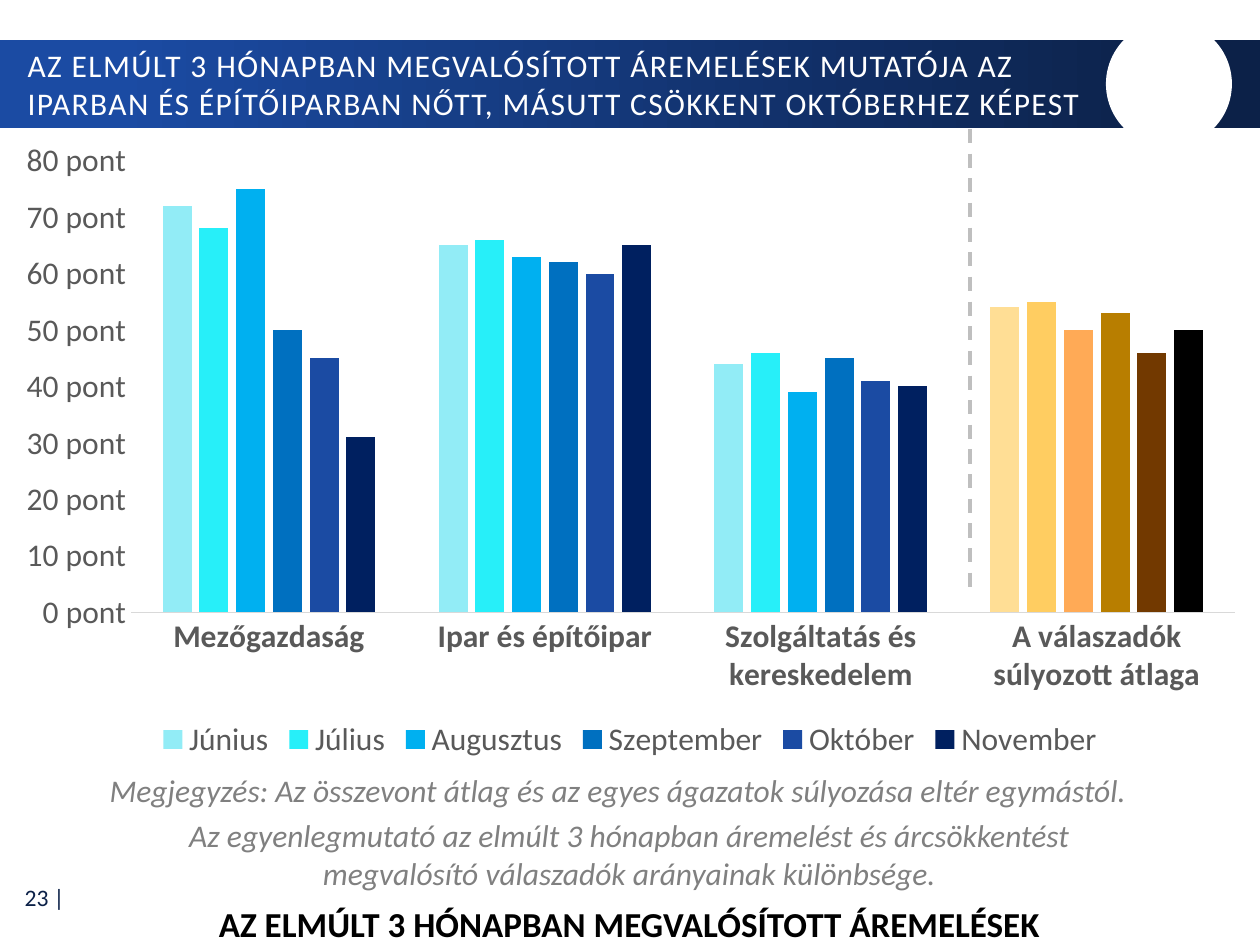
from lxml.etree import SubElement
from pptx import Presentation
from pptx.chart.data import CategoryChartData
from pptx.dml.color import RGBColor
from pptx.enum.chart import XL_CHART_TYPE, XL_LEGEND_POSITION, XL_TICK_MARK
from pptx.enum.dml import MSO_LINE
from pptx.enum.shapes import MSO_CONNECTOR, MSO_SHAPE
from pptx.enum.text import MSO_ANCHOR, MSO_AUTO_SIZE, PP_ALIGN
from pptx.oxml import parse_xml
from pptx.oxml.ns import nsdecls, qn
from pptx.util import Pt

PX = 914400 // 126
FONT = "Calibri"
WHITE = RGBColor(0xFF, 0xFF, 0xFF)
BLACK = RGBColor(0, 0, 0)
BLUE = RGBColor(0x1B, 0x4B, 0xA3)
NAVY = RGBColor(0x0C, 0x21, 0x48)
NOTE_GRAY = RGBColor(0x80, 0x80, 0x80)
AXIS_GRAY = RGBColor(0x59, 0x59, 0x59)
AXIS_LINE = RGBColor(0xD9, 0xD9, 0xD9)
DIVIDER = RGBColor(0xBF, 0xBF, 0xBF)

CATEGORIES = ["Mezőgazdaság", "Ipar és építőipar", "Szolgáltatás és kereskedelem",
              "A válaszadók súlyozott átlaga"]
# month, values, sector colour, colour of the weighted average
MONTHS = [
    ("Június", (72, 65, 44, 54), RGBColor(0x92, 0xEC, 0xF6), RGBColor(0xFF, 0xDE, 0x95)),
    ("Július", (68, 66, 46, 55), RGBColor(0x27, 0xEF, 0xF9), RGBColor(0xFF, 0xCD, 0x61)),
    ("Augusztus", (75, 63, 39, 50), RGBColor(0x00, 0xB0, 0xF0), RGBColor(0xFF, 0xAA, 0x56)),
    ("Szeptember", (50, 62, 45, 53), RGBColor(0x00, 0x70, 0xC0), RGBColor(0xB8, 0x7E, 0x00)),
    ("Október", (45, 60, 41, 46), BLUE, RGBColor(0x72, 0x39, 0x00)),
    ("November", (31, 65, 40, 50), RGBColor(0x00, 0x20, 0x60), BLACK),
]


def px(*lengths):
    return [n * PX for n in lengths]


def set_font(font, size, color, bold=False, italic=False):
    font.name, font.size, font.bold, font.italic = FONT, Pt(size), bold, italic
    font.color.rgb = color


def fill_solid(fill, color):
    fill.solid()
    fill.fore_color.rgb = color


class SlideBuilder:
    def __init__(self, slide):
        self.slide = slide
        self.shapes = slide.shapes

    def shape(self, kind, box, color):
        sp = self.shapes.add_shape(kind, *px(*box))
        sp.shadow.inherit = False
        sp.line.fill.background()
        fill_solid(sp.fill, color)
        return sp

    def banner(self, box, stops):
        """Rectangle with a left-to-right gradient of (position, colour) stops."""
        fill = self.shape(MSO_SHAPE.RECTANGLE, box, WHITE).fill
        fill.gradient()
        fill.gradient_angle = 0
        for stop, (position, color) in zip(fill.gradient_stops, stops):
            stop.position = position
            stop.color.rgb = color

    def title(self, box, text):
        sp = self.shapes.title
        self.shapes._spTree.append(sp._element)  # in front of the banner
        sp.left, sp.top, sp.width, sp.height = px(*box)
        tf = sp.text_frame
        tf.text = text
        tf.word_wrap, tf.auto_size = True, MSO_AUTO_SIZE.NONE
        tf.vertical_anchor = MSO_ANCHOR.MIDDLE
        p = tf.paragraphs[0]
        p.alignment = PP_ALIGN.LEFT
        set_font(p.font, 18, WHITE)
        p.runs[0].font._element.set("spc", "80")

    def text(self, box, paragraphs, align=PP_ALIGN.CENTER, anchor=MSO_ANCHOR.TOP):
        """Text box; each paragraph is (text, space after, font settings)."""
        tf = self.shapes.add_textbox(*px(*box)).text_frame
        tf.word_wrap, tf.vertical_anchor = True, anchor
        for i, (text, after, style) in enumerate(paragraphs):
            p = tf.add_paragraph() if i else tf.paragraphs[0]
            p.text, p.alignment, p.space_after = text, align, Pt(after)
            set_font(p.font, **style)

    def dashed_line(self, x, top, bottom):
        line = self.shapes.add_connector(MSO_CONNECTOR.STRAIGHT, *px(x, top, x, bottom))
        line.line.color.rgb = DIVIDER
        line.line.width = Pt(2)
        line.line.dash_style = MSO_LINE.DASH
        SubElement(line._element.spPr, qn("a:effectLst"))

    def column_chart(self, box):
        data = CategoryChartData()
        data.categories = CATEGORIES
        for name, values, *_ in MONTHS:
            data.add_series(name, values)
        chart = self.shapes.add_chart(XL_CHART_TYPE.COLUMN_CLUSTERED, *px(*box), data).chart
        set_font(chart.font, 18, BLACK)
        chart.has_title = False
        chart.has_legend = True
        chart.legend.position = XL_LEGEND_POSITION.BOTTOM
        chart.legend.include_in_layout = False
        set_font(chart.legend.font, 18, AXIS_GRAY)

        plot = chart.plots[0]
        plot.gap_width, plot.overlap, plot.vary_by_categories = 219, -27, False
        for series, (_, _, color, average_color) in zip(plot.series, MONTHS):
            series.invert_if_negative = False
            fill_solid(series.format.fill, color)
            fill_solid(series.points[len(CATEGORIES) - 1].format.fill, average_color)

        for axis, bold in ((chart.category_axis, True), (chart.value_axis, False)):
            axis.major_tick_mark = axis.minor_tick_mark = XL_TICK_MARK.NONE
            axis.has_major_gridlines = False
            set_font(axis.tick_labels.font, 18, AXIS_GRAY, bold)
        chart.category_axis.format.line.color.rgb = AXIS_LINE
        chart.category_axis.format.line.width = Pt(0.75)
        values = chart.value_axis
        values.minimum_scale, values.maximum_scale, values.major_unit = 0, 80, 10
        values.format.line.fill.background()
        values.tick_labels.number_format = 'General\\ "pont"'
        values.tick_labels.number_format_is_linked = False
        self.place_plot(chart, x=0.104, y=0.05, w=0.876, h=0.71)

    def place_plot(self, chart, **fractions):
        """Fix the inner plot area as fractions of the chart."""
        area = chart._chartSpace.chart.plotArea
        for old in area.findall(qn("c:layout")):
            area.remove(old)
        sizes = "".join(f'<c:{k} val="{v}"/>' for k, v in fractions.items())
        area.insert(0, parse_xml(
            f'<c:layout {nsdecls("c")}><c:manualLayout><c:layoutTarget val="inner"/>'
            f'<c:xMode val="edge"/><c:yMode val="edge"/>{sizes}</c:manualLayout></c:layout>'))


def main():
    prs = Presentation()
    prs.slide_width, prs.slide_height = px(1260, 945)
    s = SlideBuilder(prs.slides.add_slide(prs.slide_layouts[5]))
    note = dict(size=18, color=NOTE_GRAY, italic=True)

    s.text((1, 874, 76, 47), [("23 |", 0, dict(size=13.5, color=NAVY))],
           PP_ALIGN.RIGHT, MSO_ANCHOR.MIDDLE)
    s.banner((0, 40, 1260, 88), [(0.09, BLUE), (0.95, NAVY)])
    s.shape(MSO_SHAPE.OVAL, (1106, 21, 126, 126), WHITE)
    s.title((15, 42, 1125, 84),
            "AZ ELMÚLT 3 HÓNAPBAN MEGVALÓSÍTOTT ÁREMELÉSEK MUTATÓJA AZ "
            "IPARBAN ÉS ÉPÍTŐIPARBAN NŐTT, MÁSUTT CSÖKKENT OKTÓBERHEZ KÉPEST")
    s.text((107, 810, 1045, 142), [
        ("Az egyenlegmutató az elmúlt 3 hónapban áremelést és árcsökkentést "
         "megvalósító válaszadók arányainak különbsége.", 6, note),
        ("AZ ELMÚLT 3 HÓNAPBAN MEGVALÓSÍTOTT ÁREMELÉSEK", 0,
         dict(size=20, color=BLACK, bold=True))])
    s.text((43, 765, 1150, 50), [
        ("Megjegyzés: Az összevont átlag és az egyes ágazatok súlyozása eltér egymástól.",
         0, note)])
    s.dashed_line(970, 129, 595)
    s.column_chart((0, 129, 1260, 636))
    prs.save("out.pptx")


if __name__ == "__main__":
    main()
